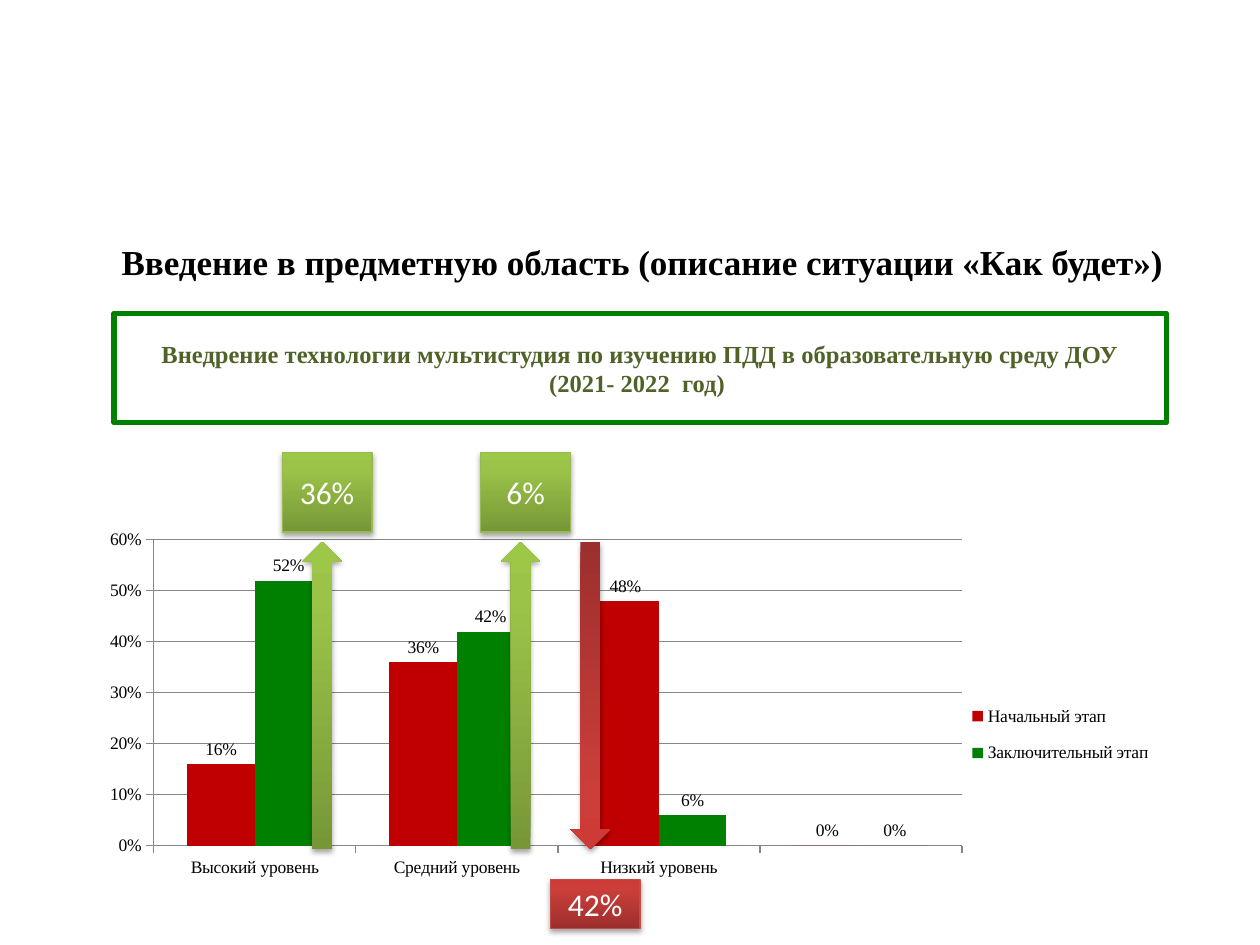
from pptx import Presentation
from pptx import util as u
from pptx.chart import data as chart_data
from pptx.dml import color as dml
from pptx.enum import chart as ch, shapes, text
from pptx.oxml import parse_xml, ns

COLORS = {
    "black": "000000", "white": "FFFFFF", "axis": "868686",
    "olive": "4F6228", "green": "008000", "red": "C00000",
    "rise_edge": "98B955", "fall_edge": "BF4C48",
}
GRADIENTS = {
    "rise": ((0, "779737"), (80, "9BC348"), (100, "9DC746")),
    "fall": ((0, "9C2F2D"), (80, "CB3E3A"), (100, "CE3B37")),
}
SERIF = "Times New Roman"
CHART_BOX = (50.4, 298.1, 624.2, 208.1)
ARROW_TOP, ARROW_WIDTH, ARROW_HEIGHT = 309.6, 22.5, 175.7
BADGE_WIDTH, BADGE_SHIFT = 51.3, 11.5


def rgb(name):
    return dml.RGBColor.from_string(COLORS[name])


def points(*lengths):
    return [u.Pt(length) for length in lengths]


def style_font(font, size, color="black", name=SERIF, bold=False):
    font.size = u.Pt(size)
    font.name = name
    font.bold = bold
    font.color.rgb = rgb(color)


def write(frame, lines, anchor=text.MSO_ANCHOR.TOP, inset=None, **font_format):
    frame.word_wrap = True
    frame.vertical_anchor = anchor
    if inset is not None:
        frame.margin_left = frame.margin_right = u.Pt(inset)
        frame.margin_top = frame.margin_bottom = u.Pt(inset)
    for index, line in enumerate(lines):
        paragraph = frame.paragraphs[0] if index == 0 else frame.add_paragraph()
        paragraph.alignment = text.PP_ALIGN.CENTER
        run = paragraph.add_run()
        run.text = line
        style_font(run.font, **font_format)


def add_title(slide, box, title):
    frame = slide.shapes.add_textbox(*points(*box)).text_frame
    write(frame, [title], size=20, bold=True)


def add_banner(slide, box, lines):
    banner = slide.shapes.add_shape(shapes.MSO_SHAPE.RECTANGLE, *points(*box))
    banner.shadow.inherit = False
    banner.fill.solid()
    banner.fill.fore_color.rgb = rgb("white")
    banner.line.color.rgb = rgb("green")
    banner.line.width = u.Pt(3)
    write(banner.text_frame, lines, anchor=text.MSO_ANCHOR.MIDDLE, inset=4.5,
          size=14, color="olive", bold=True)


def add_glossy(slide, preset, box, trend):
    glossy = slide.shapes.add_shape(preset, *points(*box))
    glossy.shadow.inherit = False
    glossy.line.fill.background()
    stops = "".join(
        f'<a:gs pos="{pos * 1000}"><a:srgbClr val="{value}"/></a:gs>'
        for pos, value in GRADIENTS[trend])
    properties = glossy.element.spPr
    properties.find(ns.qn("a:prstGeom")).addnext(parse_xml(
        f'<a:gradFill {ns.nsdecls("a")} rotWithShape="1"><a:gsLst>{stops}</a:gsLst>'
        '<a:lin ang="16200000" scaled="0"/></a:gradFill>'))
    properties.find(ns.qn("a:effectLst")).append(parse_xml(
        f'<a:outerShdw {ns.nsdecls("a")} blurRad="{u.Pt(3.1)}" dist="{u.Pt(1.8)}" '
        'dir="5400000" rotWithShape="0"><a:srgbClr val="000000">'
        '<a:alpha val="35000"/></a:srgbClr></a:outerShdw>'))
    return glossy


def add_change(slide, left, trend, label, badge_top, badge_height):
    arrow = add_glossy(slide, shapes.MSO_SHAPE.UP_ARROW,
                       (left, ARROW_TOP, ARROW_WIDTH, ARROW_HEIGHT), trend)
    if trend == "fall":
        arrow.element.spPr.xfrm.set("flipV", "1")
    badge = add_glossy(slide, shapes.MSO_SHAPE.RECTANGLE,
                       (left - BADGE_SHIFT, badge_top, BADGE_WIDTH, badge_height), trend)
    badge.line.color.rgb = rgb(trend + "_edge")
    badge.line.width = u.Pt(0.75)
    write(badge.text_frame, [label], anchor=text.MSO_ANCHOR.MIDDLE,
          size=18, color="white", name="Calibri")


def set_layout(parent, before, x, y, w, h, inner=False):
    for old in parent.findall(ns.qn("c:layout")):
        parent.remove(old)
    target = '<c:layoutTarget val="inner"/>' if inner else ""
    before.addprevious(parse_xml(
        f'<c:layout {ns.nsdecls("c")}><c:manualLayout>{target}'
        '<c:xMode val="edge"/><c:yMode val="edge"/>'
        f'<c:x val="{x}"/><c:y val="{y}"/><c:w val="{w}"/><c:h val="{h}"/>'
        '</c:manualLayout></c:layout>'))


def style_axis(axis):
    style_font(axis.tick_labels.font, 10)
    axis.major_tick_mark = ch.XL_TICK_MARK.OUTSIDE
    axis.minor_tick_mark = ch.XL_TICK_MARK.NONE
    axis.format.line.color.rgb = rgb("axis")


def add_levels_chart(slide):
    levels = chart_data.CategoryChartData(number_format="0%")
    levels.categories = ["Высокий уровень", "Средний уровень", "Низкий уровень"]
    levels.add_series("Начальный этап", (0.16, 0.36, 0.48, None))
    levels.add_series("Заключительный этап", (0.52, 0.42, 0.06, None))
    chart = slide.shapes.add_chart(
        ch.XL_CHART_TYPE.COLUMN_CLUSTERED, *points(*CHART_BOX), levels).chart
    chart.has_title = False
    style_font(chart.font, 10, name="Calibri")
    style_axis(chart.category_axis)

    scale = chart.value_axis
    style_axis(scale)
    scale.minimum_scale, scale.maximum_scale, scale.major_unit = 0, 0.6, 0.1
    scale.tick_labels.number_format = "0%"
    scale.tick_labels.number_format_is_linked = False
    scale.major_gridlines.format.line.color.rgb = rgb("axis")

    plot = chart.plots[0]
    plot.gap_width, plot.overlap, plot.vary_by_categories = 100, 0, False
    for stage, color in zip(plot.series, ("red", "green")):
        stage.format.fill.solid()
        stage.format.fill.fore_color.rgb = rgb(color)
        stage.invert_if_negative = False
        labels = stage.data_labels
        labels.show_value = True
        labels.number_format, labels.number_format_is_linked = "0%", False
        labels.position = ch.XL_LABEL_POSITION.OUTSIDE_END
        style_font(labels.font, 10)

    chart.has_legend = True
    legend = chart.legend
    legend.position = ch.XL_LEGEND_POSITION.RIGHT
    legend.include_in_layout = False
    style_font(legend.font, 10)
    legend_xml = legend._element
    set_layout(legend_xml, legend_xml.find(ns.qn("c:overlay")), 0.79, 0.46, 0.2, 0.25)
    chart_xml = chart._chartSpace.chart
    area = chart_xml.plotArea
    set_layout(area, area.find(ns.qn("c:barChart")), 0.06, 0.05, 0.74, 0.84, inner=True)
    chart_xml.find(ns.qn("c:dispBlanksAs")).set("val", "zero")


def main():
    deck = Presentation()
    deck.slide_width, deck.slide_height = points(720, 540)
    slide = deck.slides.add_slide(deck.slide_layouts[6])
    add_banner(slide, (65.2, 179, 601.2, 62.6), [
        "Внедрение технологии мультистудия по изучению ПДД в образовательную среду ДОУ",
        "(2021- 2022  год) "])
    add_title(slide, (14.4, 133.9, 705.6, 39.6),
              "Введение в предметную область (описание ситуации «Как будет»)")
    add_levels_chart(slide)
    add_change(slide, 172.8, "rise", "36%", 258.5, 45.6)
    add_change(slide, 286.3, "rise", "6%", 258.5, 45.6)
    add_change(slide, 326, "fall", "42%", 502.6, 28.1)
    deck.save("out.pptx")


if __name__ == "__main__":
    main()
